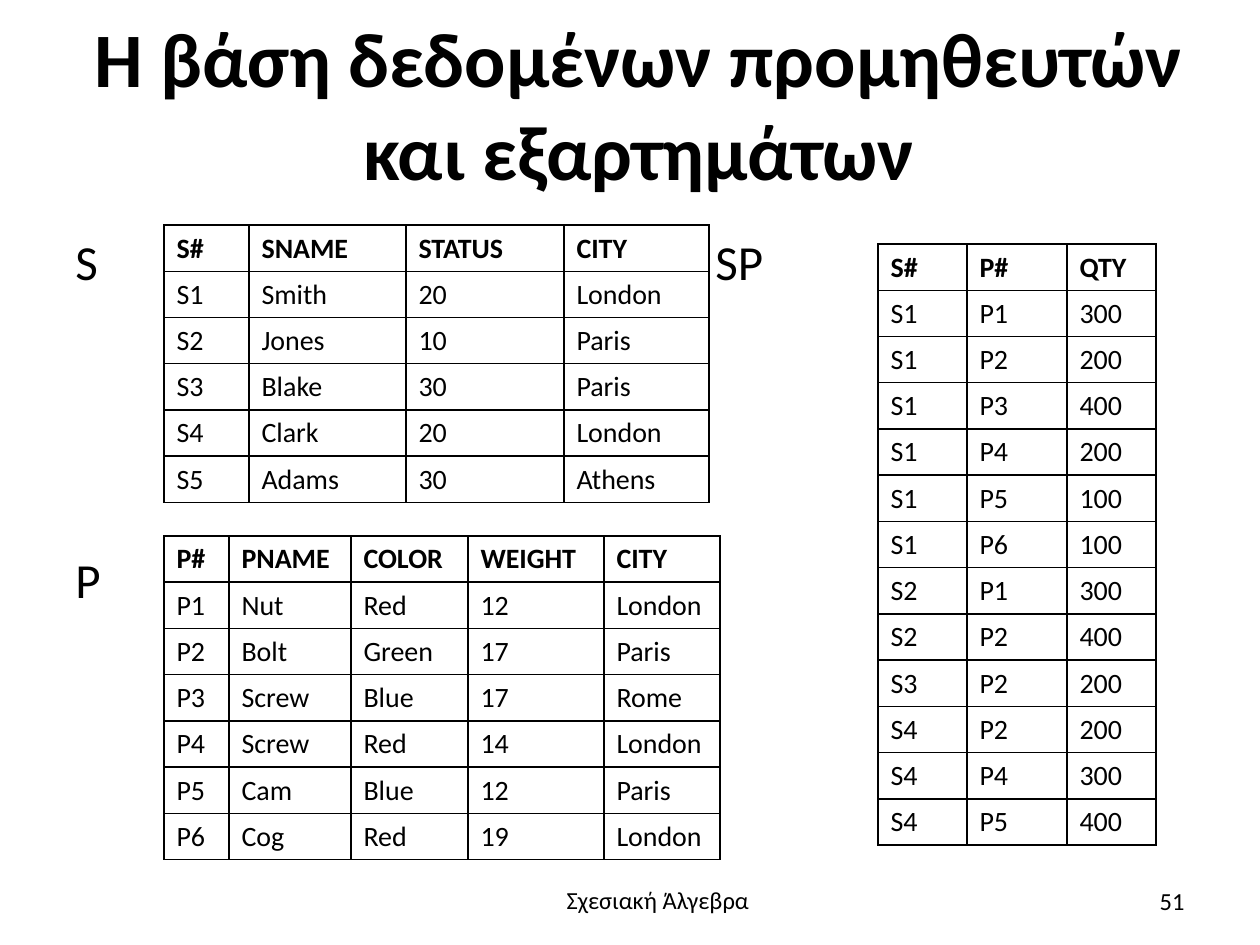
import pptx
import pptx.util
import pptx.dml.color
import pptx.enum.text
import pptx.oxml
import pptx.oxml.ns

PX = 914400 // 126
ALIGN = pptx.enum.text.PP_ALIGN
ANCHOR = pptx.enum.text.MSO_ANCHOR
INK = "000000"

deck = pptx.Presentation()
deck.slide_width = 1260 * PX
deck.slide_height = 945 * PX
slide = deck.slides.add_slide(deck.slide_layouts[6])


def style(frame, size, align, bold=False):
    para = frame.paragraphs[0]
    para.alignment = align
    font = para.runs[0].font
    font.name = "Calibri"
    font.size = pptx.util.Pt(size)
    font.bold = bold
    font.color.rgb = pptx.dml.color.RGBColor.from_string(INK)


def border(cell):
    props = cell._tc.get_or_add_tcPr()
    for spot, side in enumerate(("lnL", "lnR", "lnT", "lnB")):
        line = pptx.oxml.parse_xml(
            f'<a:{side} {pptx.oxml.ns.nsdecls("a")} w="12700"><a:solidFill>'
            f'<a:srgbClr val="{INK}"/></a:solidFill></a:{side}>')
        props.insert(spot, line)


texts = [
    ("Η βάση δεδομένων προμηθευτών και εξαρτημάτων",
     64, 11, 1150, 184, 44, ALIGN.CENTER, ANCHOR.MIDDLE, True),
    ("S", 63, 225, 80, 72, 28, ALIGN.LEFT, ANCHOR.TOP, False),
    ("SP", 703, 225, 100, 72, 28, ALIGN.LEFT, ANCHOR.TOP, False),
    ("P", 63, 543, 80, 72, 28, ALIGN.LEFT, ANCHOR.TOP, False),
    ("Σχεσιακή Άλγεβρα", 438, 879, 440, 69, 14, ALIGN.CENTER, ANCHOR.TOP, False),
    ("51", 903, 876, 294, 50, 14, ALIGN.RIGHT, ANCHOR.MIDDLE, False),
]
for words, left, top, width, height, size, align, anchor, bold in texts:
    box = slide.shapes.add_textbox(left * PX, top * PX, width * PX, height * PX)
    frame = box.text_frame
    frame.word_wrap = True
    frame.vertical_anchor = anchor
    frame.text = words
    style(frame, size, align, bold)

tables = [
    (164, 225, [85, 157, 158, 145], """S# SNAME STATUS CITY
S1 Smith 20 London
S2 Jones 10 Paris
S3 Blake 30 Paris
S4 Clark 20 London
S5 Adams 30 Athens"""),
    (164, 536, [65, 122, 117, 136, 116], """P# PNAME COLOR WEIGHT CITY
P1 Nut Red 12 London
P2 Bolt Green 17 Paris
P3 Screw Blue 17 Rome
P4 Screw Red 14 London
P5 Cam Blue 12 Paris
P6 Cog Red 19 London"""),
    (878, 244, [89, 100, 89], """S# P# QTY
S1 P1 300
S1 P2 200
S1 P3 400
S1 P4 200
S1 P5 100
S1 P6 100
S2 P1 300
S2 P2 400
S3 P2 200
S4 P2 200
S4 P4 300
S4 P5 400"""),
]
for left, top, widths, data in tables:
    rows = [line.split() for line in data.splitlines()]
    shape = slide.shapes.add_table(
        len(rows), len(widths), left * PX, top * PX,
        sum(widths) * PX, len(rows) * 46 * PX)
    table = shape.table
    table.first_row = False
    table.horz_banding = False
    for column, width in zip(table.columns, widths):
        column.width = width * PX
    for r, row in enumerate(rows):
        for c, value in enumerate(row):
            cell = table.cell(r, c)
            cell.fill.background()
            border(cell)
            cell.text_frame.text = value
            style(cell.text_frame, 16, ALIGN.JUSTIFY, r == 0)

deck.save("out.pptx")
